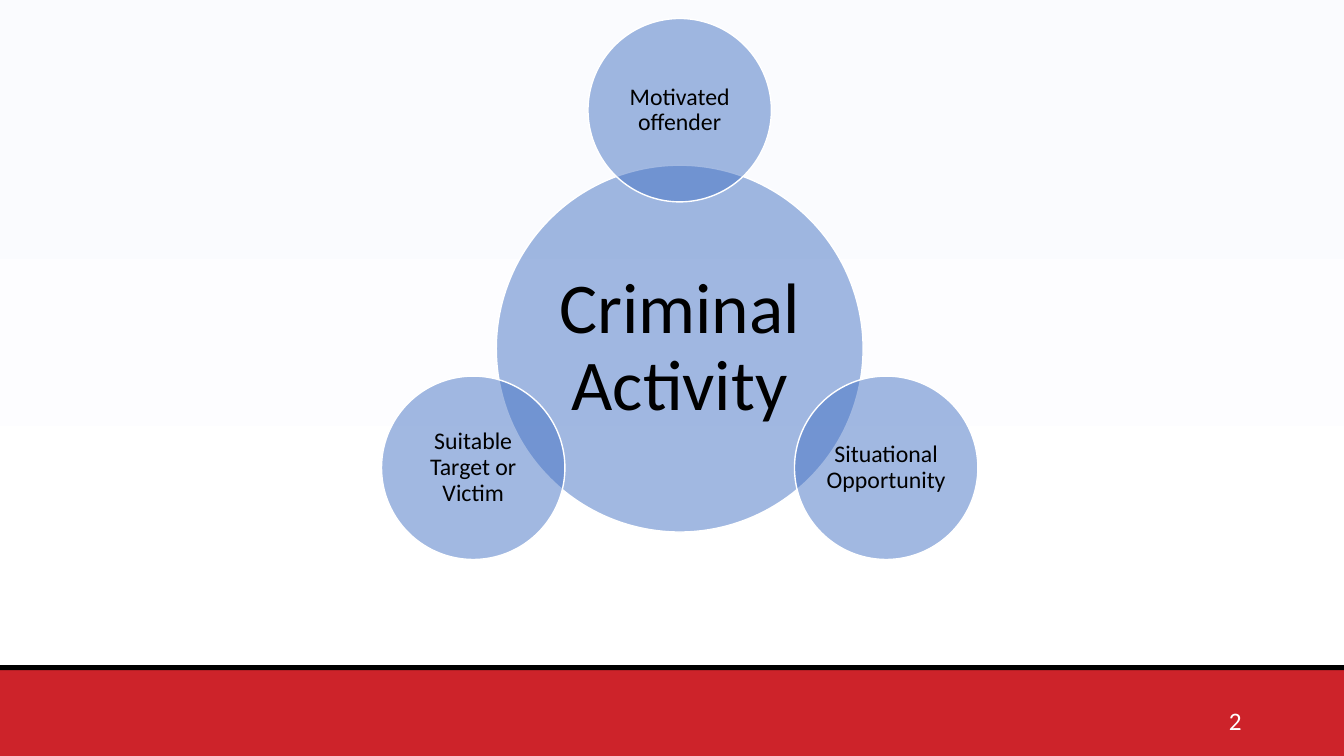
from math import cos, radians, sin

from lxml.etree import SubElement
from pptx import Presentation
from pptx.dml.color import RGBColor
from pptx.enum.shapes import MSO_SHAPE
from pptx.enum.text import MSO_ANCHOR, PP_ALIGN
from pptx.oxml.ns import qn
from pptx.util import Pt

WIDTH, HEIGHT = 960, 540
FOOTER_HEIGHT = 65
RULE_HEIGHT = 3.6
FONT = "Calibri"
BLUE = RGBColor(0x44, 0x72, 0xC4)
PALE_BLUE = RGBColor(0xFA, 0xFB, 0xFE)
RED = RGBColor(0xCD, 0x23, 0x2A)
BLACK = RGBColor(0, 0, 0)
WHITE = RGBColor(0xFF, 0xFF, 0xFF)

HUB = "Criminal Activity"
# Label and clockwise angle from the right
SATELLITES = [
    ("Motivated offender", -90),
    ("Situational Opportunity", 30),
    ("Suitable Target or Victim", 150),
]


def add_plain_shape(slide, kind, left, top, width, height):
    shape = slide.shapes.add_shape(kind, Pt(left), Pt(top), Pt(width), Pt(height))
    shape.shadow.inherit = False
    shape.line.fill.background()
    return shape


def write_text(shape, text, size, color, alignment, inset, line_spacing=1.0):
    frame = shape.text_frame
    frame.word_wrap = True
    frame.vertical_anchor = MSO_ANCHOR.MIDDLE
    frame.margin_left = frame.margin_right = Pt(inset)
    frame.margin_top = frame.margin_bottom = Pt(inset)
    paragraph = frame.paragraphs[0]
    paragraph.alignment = alignment
    paragraph.line_spacing = line_spacing
    run = paragraph.add_run()
    run.text = text
    run.font.name = FONT
    run.font.size = Pt(size)
    run.font.color.rgb = color


def add_backdrop(slide, left, top, width, height):
    backdrop = add_plain_shape(slide, MSO_SHAPE.RECTANGLE, left, top, width, height)
    backdrop.fill.gradient()
    backdrop.fill.gradient_angle = 270
    stops = zip(backdrop.fill.gradient_stops, (PALE_BLUE, WHITE), (0.14, 0.89))
    for stop, color, position in stops:
        stop.color.rgb = color
        stop.position = position


def add_footer(slide, left, top, width, height, number):
    for band_height, color in ((height, RED), (RULE_HEIGHT, BLACK)):
        band = add_plain_shape(slide, MSO_SHAPE.RECTANGLE, left, top, width, band_height)
        band.fill.solid()
        band.fill.fore_color.rgb = color
    number_box = slide.shapes.add_textbox(
        Pt(left + width - 282), Pt(top + 25.5), Pt(216), Pt(28.8)
    )
    write_text(number_box, number, 18, WHITE, PP_ALIGN.RIGHT, 7.2)


def add_circle(slide, center_x, center_y, diameter, text, size, inset):
    radius = diameter / 2
    circle = add_plain_shape(
        slide, MSO_SHAPE.OVAL, center_x - radius, center_y - radius, diameter, diameter
    )
    circle.fill.solid()
    circle.fill.fore_color.rgb = BLUE
    color_element = circle.fill._xPr.find(qn("a:solidFill"))[0]
    SubElement(color_element, qn("a:alpha"), val="50000")
    circle.line.color.rgb = WHITE
    circle.line.width = Pt(1)
    write_text(circle, text, size, BLACK, PP_ALIGN.CENTER, inset, 0.9)


def add_radial_diagram(slide, center_x, center_y, hub_diameter):
    """Draw the hub with half-size circles overlapping its edge."""
    orbit = hub_diameter * 0.65
    add_circle(slide, center_x, center_y, hub_diameter, HUB, 51, 5.1)
    for label, degrees in SATELLITES:
        angle = radians(degrees)
        add_circle(
            slide,
            center_x + orbit * cos(angle),
            center_y + orbit * sin(angle),
            hub_diameter / 2,
            label,
            17,
            1.6,
        )


def main():
    presentation = Presentation()
    presentation.slide_width = Pt(WIDTH)
    presentation.slide_height = Pt(HEIGHT)
    slide = presentation.slides.add_slide(presentation.slide_layouts[6])
    footer_top = HEIGHT - FOOTER_HEIGHT
    add_backdrop(slide, 0, 0, WIDTH, footer_top)
    add_footer(slide, 0, footer_top, WIDTH, FOOTER_HEIGHT, "2")
    add_radial_diagram(slide, 485.5, 249, 262)
    presentation.save("out.pptx")


if __name__ == "__main__":
    main()
